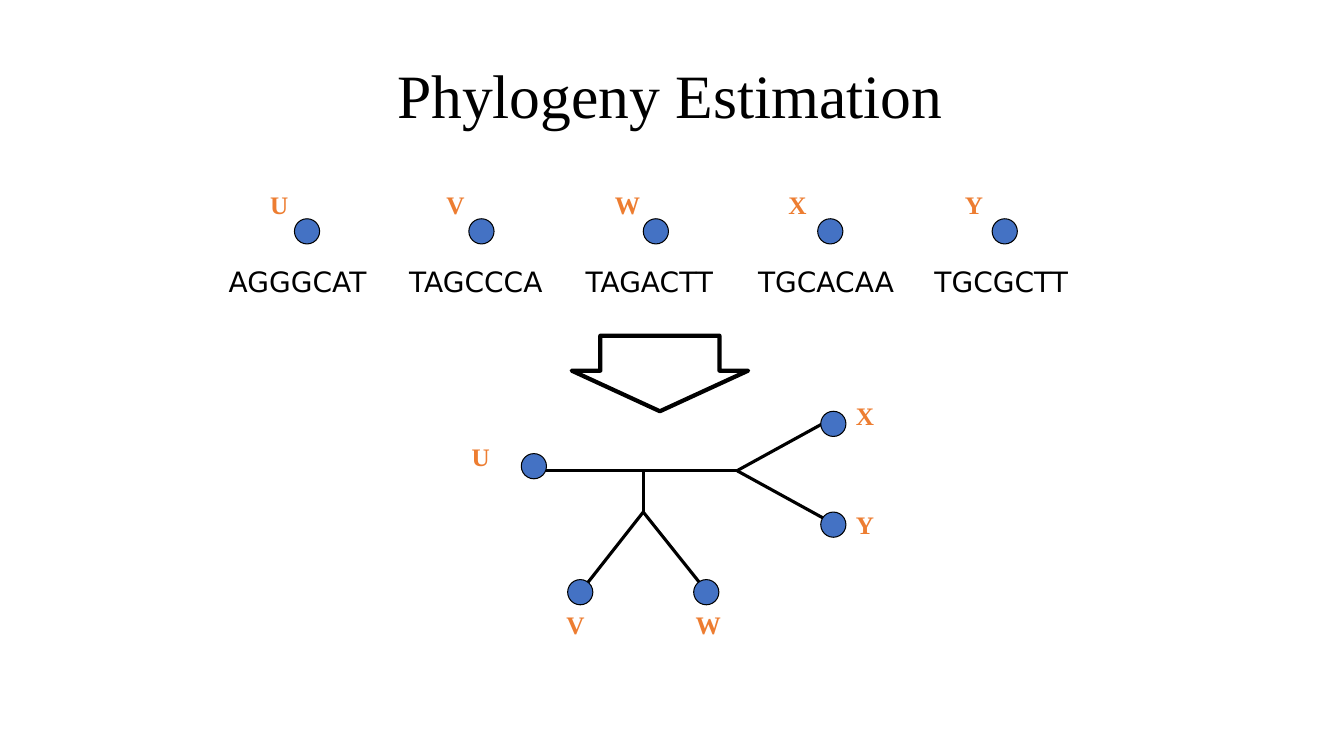
from dataclasses import dataclass

from lxml.etree import SubElement
from pptx import Presentation
from pptx.dml.color import RGBColor
from pptx.enum.shapes import MSO_CONNECTOR, MSO_SHAPE
from pptx.enum.text import MSO_ANCHOR, MSO_AUTO_SIZE
from pptx.oxml.ns import qn
from pptx.slide import Slide
from pptx.util import Inches, Pt

Point = tuple[float, float]


@dataclass(frozen=True)
class TextStyle:
    font: str
    size: float
    color: RGBColor
    bold: bool = False


@dataclass(frozen=True)
class Theme:
    ink: RGBColor = RGBColor(0x00, 0x00, 0x00)
    dot: RGBColor = RGBColor(0x44, 0x72, 0xC4)
    title: TextStyle = TextStyle("Times New Roman", 44, RGBColor(0, 0, 0))
    sequence: TextStyle = TextStyle("DejaVu Sans", 20, RGBColor(0, 0, 0))
    label: TextStyle = TextStyle("Times New Roman", 18, RGBColor(0xED, 0x7D, 0x31), True)
    outline: float = 0.75
    branch: float = 2.25
    arrow: float = 3


@dataclass(frozen=True)
class Taxon:
    name: str
    label_left: float
    sequence: str
    sequence_left: float
    sequence_width: float
    leaf: Point
    leaf_label: Point


THEME = Theme()
DOT_SIZE = 0.25
FIRST_DOT, DOT_STEP, DOT_TOP = 2.92, 1.73, 2.17
LABEL_TOP, SEQUENCE_TOP = 1.83, 2.57

TAXA = [
    Taxon("U", 2.58, "AGGGCAT", 2.17, 1.59, (5.17, 4.5), (4.58, 4.33)),
    Taxon("V", 4.33, "TAGCCCA", 3.96, 1.55, (5.63, 5.75), (5.52, 6)),
    Taxon("W", 6, "TAGACTT", 5.71, 1.5, (6.88, 5.75), (6.8, 6)),
    Taxon("X", 7.72, "TGCACAA", 7.42, 1.55, (8.14, 4.08), (8.39, 3.92)),
    Taxon("Y", 9.47, "TGCGCTT", 9.17, 1.53, (8.14, 5.08), (8.39, 5)),
]

LOWER_FORK: Point = (6.38, 5.08)
RIGHT_FORK: Point = (7.31, 4.67)
BRANCHES: list[tuple[Point, Point]] = [
    ((5.72, 5.92), LOWER_FORK),
    ((7.05, 5.92), LOWER_FORK),
    ((7.33, 4.67), (5.33, 4.67)),
    ((6.38, 4.67), LOWER_FORK),
    ((8.22, 5.17), RIGHT_FORK),
    ((8.22, 4.17), RIGHT_FORK),
]


def add_text(page: Slide, text: str, at: Point, size: Point, style: TextStyle) -> None:
    """Place one unwrapped line of text in a given style."""
    box = page.shapes.add_textbox(*map(Inches, at + size))
    frame = box.text_frame
    frame.text = text
    frame.word_wrap = False
    frame.auto_size = MSO_AUTO_SIZE.SHAPE_TO_FIT_TEXT
    font = frame.paragraphs[0].runs[0].font
    font.name, font.size, font.bold = style.font, Pt(style.size), style.bold
    font.color.rgb = style.color


def add_title(page: Slide, text: str) -> None:
    """Place the slide title, centred vertically in its box."""
    add_text(page, text, (3.84, 0.35), (5.76, 1.25), THEME.title)
    frame = page.shapes[-1].text_frame
    frame.auto_size = MSO_AUTO_SIZE.NONE
    frame.word_wrap = True
    frame.vertical_anchor = MSO_ANCHOR.MIDDLE
    frame.paragraphs[0].line_spacing = 0.9


def add_label(page: Slide, name: str, at: Point) -> None:
    """Place the letter that names a taxon."""
    add_text(page, name, at, (0.45 if name == "W" else 0.38, 0.4), THEME.label)


def add_dot(page: Slide, at: Point) -> None:
    """Draw the round marker of a taxon."""
    dot = page.shapes.add_shape(MSO_SHAPE.OVAL, *map(Inches, at + (DOT_SIZE, DOT_SIZE)))
    dot.shadow.inherit = False
    dot.fill.solid()
    dot.fill.fore_color.rgb = THEME.dot
    dot.line.color.rgb = THEME.ink
    dot.line.width = Pt(THEME.outline)


def add_branch(page: Slide, start: Point, end: Point) -> None:
    """Draw one branch of the tree."""
    branch = page.shapes.add_connector(MSO_CONNECTOR.STRAIGHT, *map(Inches, start + end))
    branch.line.color.rgb = THEME.ink
    branch.line.width = Pt(THEME.branch)
    SubElement(branch._element.spPr, qn("a:effectLst"))


def add_down_arrow(page: Slide) -> None:
    """Draw the hollow arrow from the sequences to the tree."""
    arrow = page.shapes.add_shape(MSO_SHAPE.DOWN_ARROW, *map(Inches, (5.67, 3.33, 1.75, 0.75)))
    arrow.adjustments[0], arrow.adjustments[1] = 0.675, 0.537
    arrow.shadow.inherit = False
    arrow.fill.background()
    arrow.line.color.rgb = THEME.ink
    arrow.line.width = Pt(THEME.arrow)


def main() -> None:
    """Build the slide and save the deck."""
    deck = Presentation()
    deck.slide_width, deck.slide_height = Inches(13.33), Inches(7.5)
    page = deck.slides.add_slide(deck.slide_layouts[6])
    for start, end in BRANCHES:
        add_branch(page, start, end)
    add_title(page, "Phylogeny Estimation")
    for column, taxon in enumerate(TAXA):
        add_text(page, taxon.sequence, (taxon.sequence_left, SEQUENCE_TOP),
                 (taxon.sequence_width, 0.44), THEME.sequence)
        add_dot(page, (FIRST_DOT + column * DOT_STEP, DOT_TOP))
        add_label(page, taxon.name, (taxon.label_left, LABEL_TOP))
    add_down_arrow(page)
    for taxon in TAXA:
        add_label(page, taxon.name, taxon.leaf_label)
        add_dot(page, taxon.leaf)
    deck.save("out.pptx")


if __name__ == "__main__":
    main()
